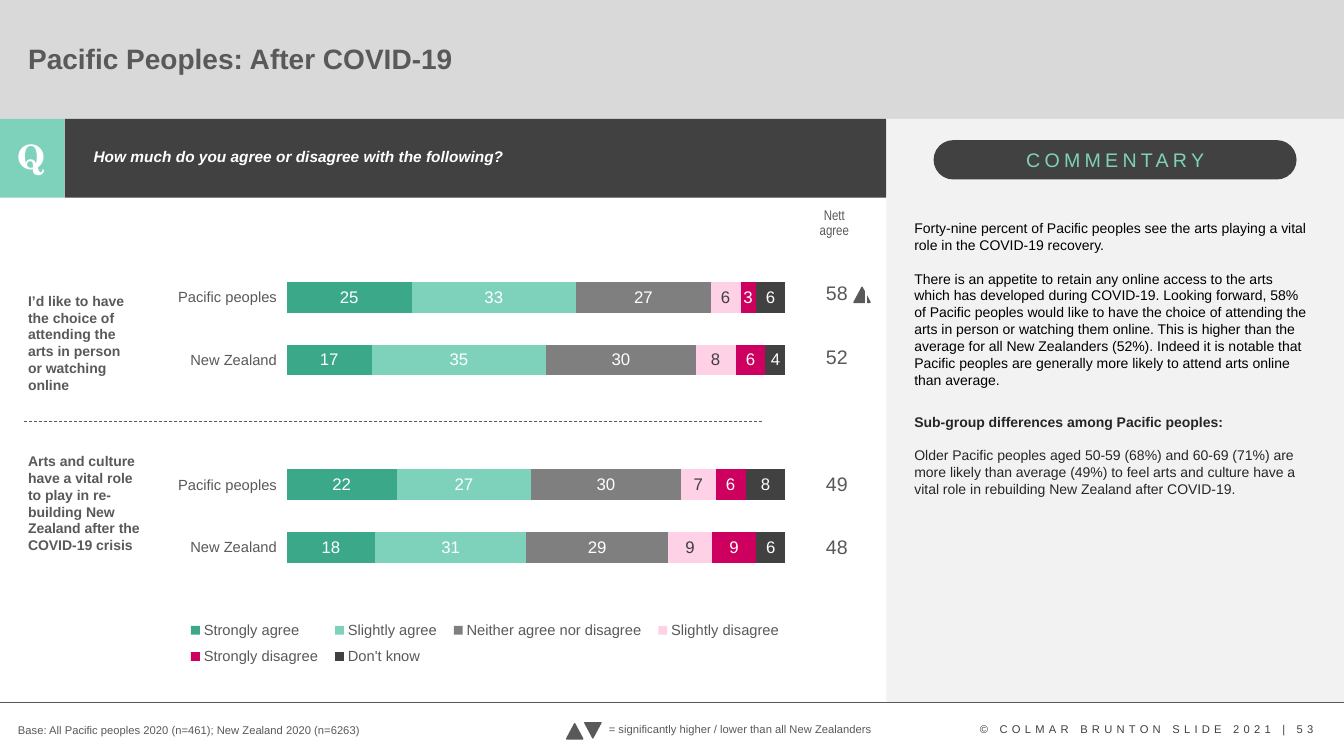
from dataclasses import dataclass

from lxml.etree import SubElement
from pptx import Presentation
from pptx.chart.data import CategoryChartData
from pptx.dml.color import RGBColor
from pptx.enum.chart import XL_CHART_TYPE as Kind, XL_LEGEND_POSITION as Side
from pptx.enum.chart import XL_TICK_LABEL_POSITION as Tick
from pptx.enum.dml import MSO_LINE as Dash
from pptx.enum.shapes import MSO_CONNECTOR as Link, MSO_SHAPE as Form
from pptx.enum.text import MSO_ANCHOR as Anchor, PP_ALIGN as Align
from pptx.oxml import parse_xml
from pptx.oxml.ns import nsdecls, qn
from pptx.util import Inches, Pt

GREY, DARK, MINT, WHITE = "595959", "414141", "7ED2BB", "FFFFFF"
INK = "262626"


@dataclass
class Box:
    left: float
    top: float
    width: float
    height: float
    fill: str
    form: Form = Form.RECTANGLE
    turn: float = 0
    edge: bool = False


@dataclass
class Para:
    text: str
    size: float
    color: str = GREY
    bold: bool = False
    italic: bool = False
    font: str = "Arial"
    center: bool = False
    before: float = 0
    lines: float = 1.0
    track: int = 0


@dataclass
class Note:
    left: float
    top: float
    width: float
    height: float
    paras: list[Para]
    wrap: bool = True
    middle: bool = False


@dataclass
class Rule:
    left: float
    right: float
    top: float
    dash: bool = False


@dataclass
class Answer:
    name: str
    color: str
    values: tuple
    ink: str = WHITE


def tone(code: str) -> RGBColor:
    return RGBColor.from_string(code)


def style(font, size: float, color: str, name: str = "Arial") -> None:
    font.size, font.name = Pt(size), name
    font.color.rgb = tone(color)


def draw_box(slide, box: Box) -> None:
    shape = slide.shapes.add_shape(box.form, Inches(box.left), Inches(box.top),
                                   Inches(box.width), Inches(box.height))
    shape.shadow.inherit = False
    shape.fill.solid()
    shape.fill.fore_color.rgb = tone(box.fill)
    if box.edge:
        shape.line.color.rgb, shape.line.width = tone(box.fill), Pt(1)
    else:
        shape.line.fill.background()
    if box.form == Form.ROUNDED_RECTANGLE:
        shape.adjustments[0] = 0.5
    shape.rotation = box.turn


def draw_note(slide, note: Note) -> None:
    frame = slide.shapes.add_textbox(Inches(note.left), Inches(note.top),
                                     Inches(note.width), Inches(note.height)).text_frame
    frame.word_wrap = note.wrap
    frame.vertical_anchor = Anchor.MIDDLE if note.middle else Anchor.TOP
    for i, item in enumerate(note.paras):
        para = frame.add_paragraph() if i else frame.paragraphs[0]
        para.alignment = Align.CENTER if item.center else Align.LEFT
        para.line_spacing = item.lines
        if item.before:
            para.space_before = Pt(item.before)
        run = para.add_run()
        run.text = item.text
        style(run.font, item.size, item.color, item.font)
        run.font.bold, run.font.italic = item.bold, item.italic
        if item.track:
            run.font._element.set("spc", str(item.track))


def draw_rule(slide, rule: Rule) -> None:
    top = Inches(rule.top)
    line = slide.shapes.add_connector(Link.STRAIGHT, Inches(rule.left), top,
                                      Inches(rule.right), top)
    line.line.color.rgb, line.line.width = tone(GREY), Pt(0.5)
    if rule.dash:
        line.line.dash_style = Dash.DASH
    SubElement(line._element.spPr, qn("a:effectLst"))


def layout(spot: tuple, inner: bool = False):
    """Build a manual layout from x, y, width and height shares."""
    parts = [("layoutTarget", "inner")] if inner else []
    parts += [("xMode", "edge"), ("yMode", "edge"), *zip("xywh", spot)]
    body = "".join(f'<c:{tag} val="{val}"/>' for tag, val in parts)
    return parse_xml(f'<c:layout {nsdecls("c")}><c:manualLayout>{body}'
                     '</c:manualLayout></c:layout>')


def draw_chart(slide, groups: list[str], answers: list[Answer]) -> None:
    data = CategoryChartData()
    data.categories = groups
    for answer in answers:
        data.add_series(answer.name, answer.values)
    chart = slide.shapes.add_chart(Kind.BAR_STACKED_100, Inches(1.65), Inches(1.86),
                                   Inches(6.26), Inches(5.14), data).chart
    style(chart.font, 10, "000000")
    chart.has_title = False
    plot = chart.plots[0]
    plot.gap_width, plot.overlap, plot.vary_by_categories = 104, 100, False
    for series, answer in zip(plot.series, answers):
        series.format.fill.solid()
        series.format.fill.fore_color.rgb = tone(answer.color)
        labels = series.data_labels
        labels.show_value = True
        style(labels.font, 12, answer.ink)
    axis = chart.category_axis
    axis.format.line.fill.background()
    axis.tick_label_position = Tick.LOW
    style(axis.tick_labels.font, 10.5, GREY)
    chart.value_axis.has_major_gridlines = False
    chart.value_axis.visible = False
    chart.has_legend = True
    legend = chart.legend
    legend.position, legend.include_in_layout = Side.BOTTOM, False
    style(legend.font, 10.5, GREY)
    area = chart._chartSpace.chart.plotArea
    for old in area.findall(qn("c:layout")):
        area.remove(old)
    area.insert(0, layout((0.191, 0.152, 0.79, 0.603), inner=True))
    key = legend._element
    for old in key.findall(qn("c:layout")):
        key.remove(old)
    key.find(qn("c:legendPos")).addnext(layout((0.02, 0.82, 0.97, 0.12)))


def draw_table(slide, scores: list[str]) -> None:
    table = slide.shapes.add_table(len(scores), 1, Inches(8.01), Inches(2.26),
                                   Inches(0.58), Inches(3.5)).table
    table.first_row = table.horz_banding = False
    for i, score in enumerate(scores):
        table.rows[i].height = Inches(0.63 if i else 0.34)
        cell = table.cell(i, 0)
        cell.fill.background()
        cell.margin_left = cell.margin_right = cell.margin_top = cell.margin_bottom = 0
        cell.vertical_anchor = Anchor.MIDDLE
        para = cell.text_frame.paragraphs[0]
        para.alignment = Align.CENTER
        if score:
            run = para.add_run()
            run.text = score
            style(run.font, 14, GREY)


BOXES = [
    Box(0, -0.02, 13.33, 1.2, "D9D9D9"),
    Box(8.79, 1.18, 4.55, 5.79, "F2F2F2"),
    Box(0.64, 1.18, 8.15, 0.78, DARK),
    Box(0, 1.18, 0.64, 0.78, MINT),
    Box(9.26, 1.39, 3.6, 0.39, DARK, Form.ROUNDED_RECTANGLE),
    *(Box(x, y, 0.16, 0.15, GREY, Form.ISOSCELES_TRIANGLE, turn, True)
      for x, y, turn in [(5.62, 7.18, 0), (5.8, 7.17, 180), (8.47, 2.85, 0)]),
]
RULES = [Rule(0, 13.33, 6.97), Rule(0.24, 7.56, 4.18, dash=True)]
NOTES = [
    Note(0.18, 0.21, 11.19, 0.78, [Para("Pacific Peoples: After COVID-19", 20, bold=True, lines=0.9)], middle=True),
    Note(0.08, 1.3, 0.47, 0.5, [Para("Q", 24, WHITE, True, font="TeX Gyre Schola", center=True)]),
    Note(0.83, 1.43, 7.6, 0.46, [Para("How much do you agree or disagree with the following?", 11, WHITE, True, True, lines=0.9)]),
    Note(10.08, 1.42, 2.02, 0.34, [Para("COMMENTARY", 14, MINT, track=300)], wrap=False),
    Note(0.18, 2.85, 1.25, 1.11, [Para("I’d like to have the choice of attending the arts in person or watching online", 10, bold=True)]),
    Note(0.18, 4.44, 1.33, 1.11, [Para("Arts and culture have a vital role to play in re-building New Zealand after the COVID-19 crisis", 10, bold=True)]),
    Note(7.93, 2.02, 0.69, 0.4, [Para("Nett agree", 10, font="Arial Narrow", center=True, lines=0.9)]),
    Note(0.08, 7.13, 4.88, 0.24, [Para("Base: All Pacific peoples 2020 (n=461); New Zealand 2020 (n=6263)", 8)]),
    Note(5.94, 7.12, 2.84, 0.24, [Para("= significantly higher / lower than all New Zealanders", 8)], wrap=False),
    Note(9.62, 7.12, 3.61, 0.24, [Para("© COLMAR BRUNTON SLIDE 2021 | 53", 8, "404040", track=300)]),
    Note(8.97, 2.13, 4.12, 2.96, [
        Para("Forty-nine percent of Pacific peoples see the arts playing a vital role in the COVID-19 recovery.", 10, "000000"),
        Para("There is an appetite to retain any online access to the arts which has developed during COVID-19. Looking forward, 58% of Pacific peoples would like to have the choice of attending the arts in person or watching them online. This is higher than the average for all New Zealanders (52%). Indeed it is notable that Pacific peoples are generally more likely to attend arts online than average.", 10, "000000", before=12),
        Para("Sub-group differences among Pacific peoples:", 10, INK, True, before=18),
        Para("Older Pacific peoples aged 50-59 (68%) and 60-69 (71%) are more likely than average (49%) to feel arts and culture have a vital role in rebuilding New Zealand after COVID-19.", 10, INK, before=12),
    ]),
]
PAIR = ["New Zealand", "Pacific peoples"]
ANSWERS = [
    Answer("Strongly agree", "3AA889", (18, 22, None, 17, 25)),
    Answer("Slightly agree", MINT, (31, 27, None, 35, 33)),
    Answer("Neither agree nor disagree", "7F7F7F", (29, 30, None, 30, 27)),
    Answer("Slightly disagree", "FFD1E6", (9, 7, None, 8, 6), "404040"),
    Answer("Strongly disagree", "CD005F", (9, 6, None, 6, 3)),
    Answer("Don't know", DARK, (6, 8, None, 4, 6)),
]


def main() -> None:
    deck = Presentation()
    deck.slide_width, deck.slide_height = Inches(13.33), Inches(7.5)
    slide = deck.slides.add_slide(deck.slide_layouts[6])
    for box in BOXES:
        draw_box(slide, box)
    draw_chart(slide, [*PAIR, "", *PAIR], ANSWERS)
    draw_table(slide, ["", "58", "52", "", "49", "48"])
    for rule in RULES:
        draw_rule(slide, rule)
    for note in NOTES:
        draw_note(slide, note)
    deck.save("out.pptx")


if __name__ == "__main__":
    main()
